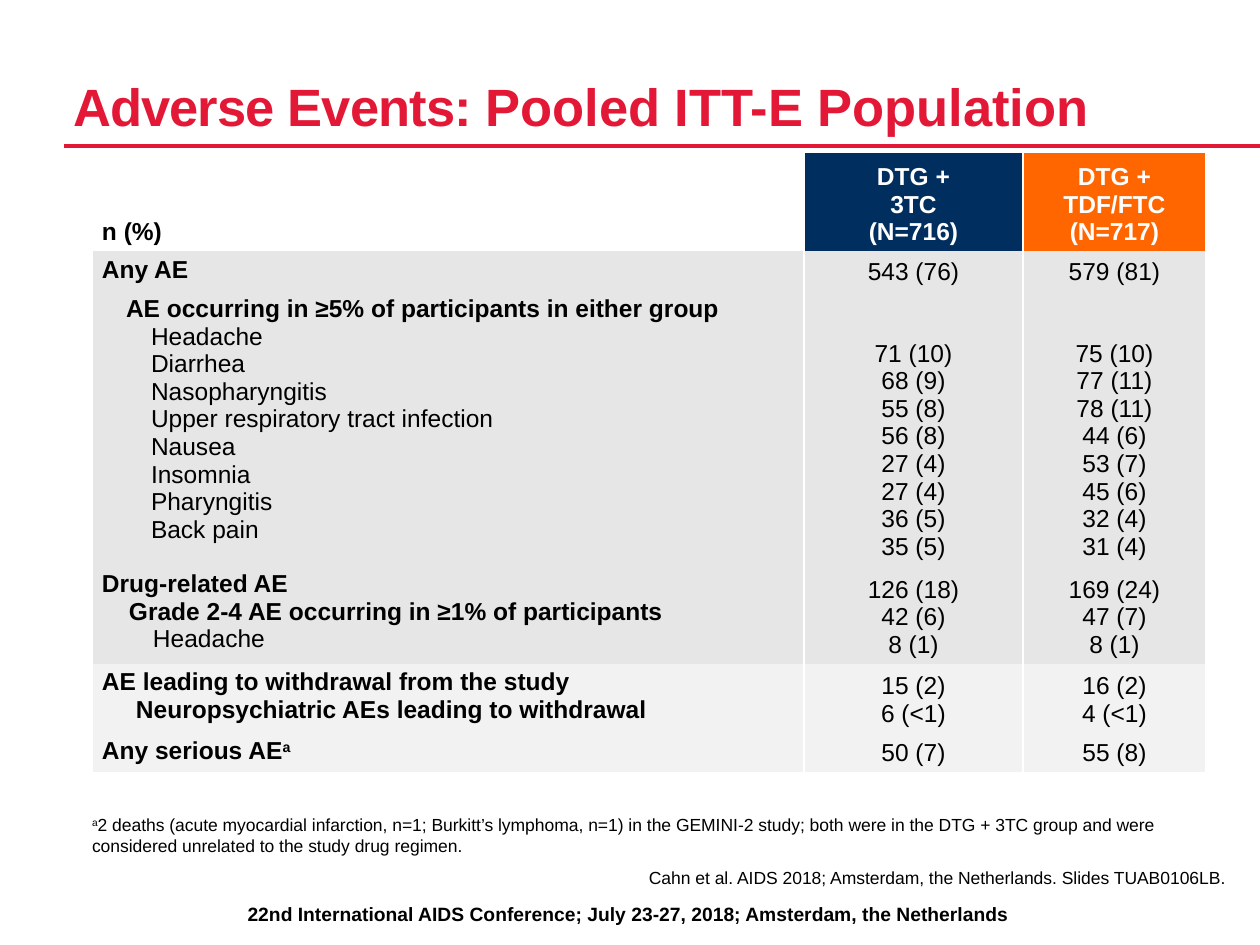
from lxml import etree
from pptx import Presentation
from pptx import util as u
from pptx.dml.color import RGBColor
from pptx.enum import shapes, text
from pptx.oxml.ns import qn

PX_PER_INCH = 126
FONT = "Arial"
RED, BLACK, WHITE = "E31836", "000000", "FFFFFF"
NAVY, ORANGE, GREY, PALE = "002F5F", "FF6600", "E6E6E6", "F2F2F2"
LEFT, CENTER, RIGHT = text.PP_ALIGN.LEFT, text.PP_ALIGN.CENTER, text.PP_ALIGN.RIGHT
TOP, BOTTOM = text.MSO_ANCHOR.TOP, text.MSO_ANCHOR.BOTTOM

COLUMNS = [712, 219, 183]
HEADERS = [
    ("DTG +|3TC|(N=716)", NAVY),
    ("DTG + TDF/FTC|(N=717)", ORANGE),
]
# height, fill, labels as (text, indent, bold), values of the two groups
ROWS = [
    (39, GREY, [("Any AE", 0, True)], "543 (76)", "579 (81)"),
    (180, GREY,
     [("AE occurring in ≥5% of participants in either group", 24, True)]
     + [(name, 49, False) for name in (
         "Headache", "Diarrhea", "Nasopharyngitis",
         "Upper respiratory tract infection", "Nausea", "Insomnia",
         "Pharyngitis", "Back pain")],
     "71 (10)|68 (9)|55 (8)|56 (8)|27 (4)|27 (4)|36 (5)|35 (5)",
     "75 (10)|77 (11)|78 (11)|44 (6)|53 (7)|45 (6)|32 (4)|31 (4)"),
    (39, GREY,
     [("Drug-related AE", 0, True),
      ("Grade 2-4 AE occurring in ≥1% of participants", 27, True),
      ("Headache", 51, False)],
     "126 (18)|42 (6)|8 (1)", "169 (24)|47 (7)|8 (1)"),
    (39, PALE,
     [("AE leading to withdrawal from the study", 0, True),
      ("Neuropsychiatric AEs leading to withdrawal", 34, True)],
     "15 (2)|6 (<1)", "16 (2)|4 (<1)"),
    (39, PALE, [("Any serious AE^a", 0, True)], "50 (7)", "55 (8)"),
]


def px(n):
    return u.Emu(round(n * u.Inches(1) / PX_PER_INCH))


def rgb(color):
    return RGBColor.from_string(color)


def add_run(p, words, size, color=BLACK, bold=False, **attrs):
    """Add a run; attrs go to the run properties (spc, baseline)."""
    r = p.add_run()
    r.text = words
    for name, value in {"name": FONT, "size": u.Pt(size), "bold": bold}.items():
        setattr(r.font, name, value)
    r.font.color.rgb = rgb(color)
    for name, value in attrs.items():
        r.font._element.set(name, str(value))


def add_textbox(s, box, align=LEFT, anchor=TOP, **spacing):
    """Add a box without insets and return its first paragraph."""
    tf = s.shapes.add_textbox(*map(px, box)).text_frame
    fmt = {"word_wrap": True, "vertical_anchor": anchor, "margin_left": 0,
           "margin_right": 0, "margin_top": 0, "margin_bottom": 0}
    for name, value in fmt.items():
        setattr(tf, name, value)
    p = tf.paragraphs[0]
    for name, value in {"alignment": align, **spacing}.items():
        setattr(p, name, value)
    return p


def add_rule(s, x1, x2, y):
    line = s.shapes.add_connector(
        shapes.MSO_CONNECTOR.STRAIGHT, px(x1), px(y), px(x2), px(y))
    line.line.color.rgb = rgb(RED)
    line.line.width = u.Pt(2)
    etree.SubElement(line._element.spPr, qn("a:effectLst"))


def set_borders(cell):
    """White vertical borders, no horizontal ones."""
    tc_pr = cell._tc.get_or_add_tcPr()
    for side in "LRTB":
        ln = etree.SubElement(tc_pr, qn(f"a:ln{side}"), w=str(u.Pt(1)))
        if side in "LR":
            fill = etree.SubElement(ln, qn("a:solidFill"))
            etree.SubElement(fill, qn("a:srgbClr"), val=WHITE)
        else:
            etree.SubElement(ln, qn("a:noFill"))


def fill_cell(cell, lines, fill=None, color=BLACK, align=LEFT, anchor=TOP):
    """Write (text, indent, bold) lines; "^" starts a superscript."""
    set_borders(cell)
    if fill:
        cell.fill.solid()
        cell.fill.fore_color.rgb = rgb(fill)
    else:
        cell.fill.background()
    fmt = {"vertical_anchor": anchor, "margin_left": px(10),
           "margin_right": px(10), "margin_top": px(5), "margin_bottom": px(5)}
    for name, value in fmt.items():
        setattr(cell, name, value)
    tf = cell.text_frame
    for i, (words, indent, bold) in enumerate(lines):
        p = tf.add_paragraph() if i else tf.paragraphs[0]
        p.alignment = align
        if indent:
            p._p.get_or_add_pPr().set("marL", str(px(indent)))
        base, _, superscript = words.partition("^")
        add_run(p, base, 14, color, bold)
        if superscript:
            add_run(p, superscript, 14, color, bold, baseline=30000)


def centred_lines(words, bold=False):
    return [(line, 0, bold) for line in words.split("|")]


def add_event_table(s):
    heights = [77] + [row[0] for row in ROWS]
    table = s.shapes.add_table(
        len(heights), len(COLUMNS), px(92), px(153),
        px(sum(COLUMNS)), px(sum(heights))).table
    table.first_row = table.horz_banding = False
    for column, width in zip(table.columns, COLUMNS):
        column.width = px(width)
    for row, height in zip(table.rows, heights):
        row.height = px(height)

    fill_cell(table.cell(0, 0), [("n (%)", 0, True)], anchor=BOTTOM)
    for c, (words, fill) in enumerate(HEADERS, 1):
        fill_cell(table.cell(0, c), centred_lines(words, True), fill, WHITE,
                  CENTER, BOTTOM)
    for r, (_, fill, labels, *values) in enumerate(ROWS, 1):
        fill_cell(table.cell(r, 0), labels, fill)
        for c, words in enumerate(values, 1):
            fill_cell(table.cell(r, c), centred_lines(words), fill,
                      align=CENTER, anchor=BOTTOM)


def main():
    prs = Presentation()
    prs.slide_width, prs.slide_height = u.Inches(10), u.Inches(7.5)
    s = prs.slides.add_slide(prs.slide_layouts[6])

    add_rule(s, 64, 1260, 146)
    footer = add_textbox(s, (8, 902, 1241, 25), CENTER)
    add_run(footer, "22nd International AIDS Conference; July 23-27, 2018; "
            "Amsterdam, the Netherlands", 11, bold=True)

    title = add_textbox(s, (73, 21, 1040, 116), anchor=BOTTOM,
                        line_spacing=u.Pt(35))
    add_run(title, "Adverse Events: ", 30, RED, True, spc=-50)
    add_run(title, "Pooled ITT-E Population", 30, RED, True)

    source = add_textbox(s, (73, 867, 1152, 25), RIGHT, space_after=u.Pt(3))
    add_run(source, "Cahn et al. AIDS 2018; Amsterdam, the Netherlands. "
            "Slides TUAB0106LB.", 10)

    add_event_table(s)

    note = add_textbox(s, (92, 814, 1076, 47), space_after=u.Pt(3))
    add_run(note, "a", 10, baseline=30000)
    add_run(note, "2 deaths (acute myocardial infarction, n=1; Burkitt’s "
            "lymphoma, n=1) in the GEMINI-2 study; both were in the DTG + 3TC "
            "group and were considered unrelated to the study drug regimen.", 10)
    prs.save("out.pptx")


if __name__ == "__main__":
    main()
